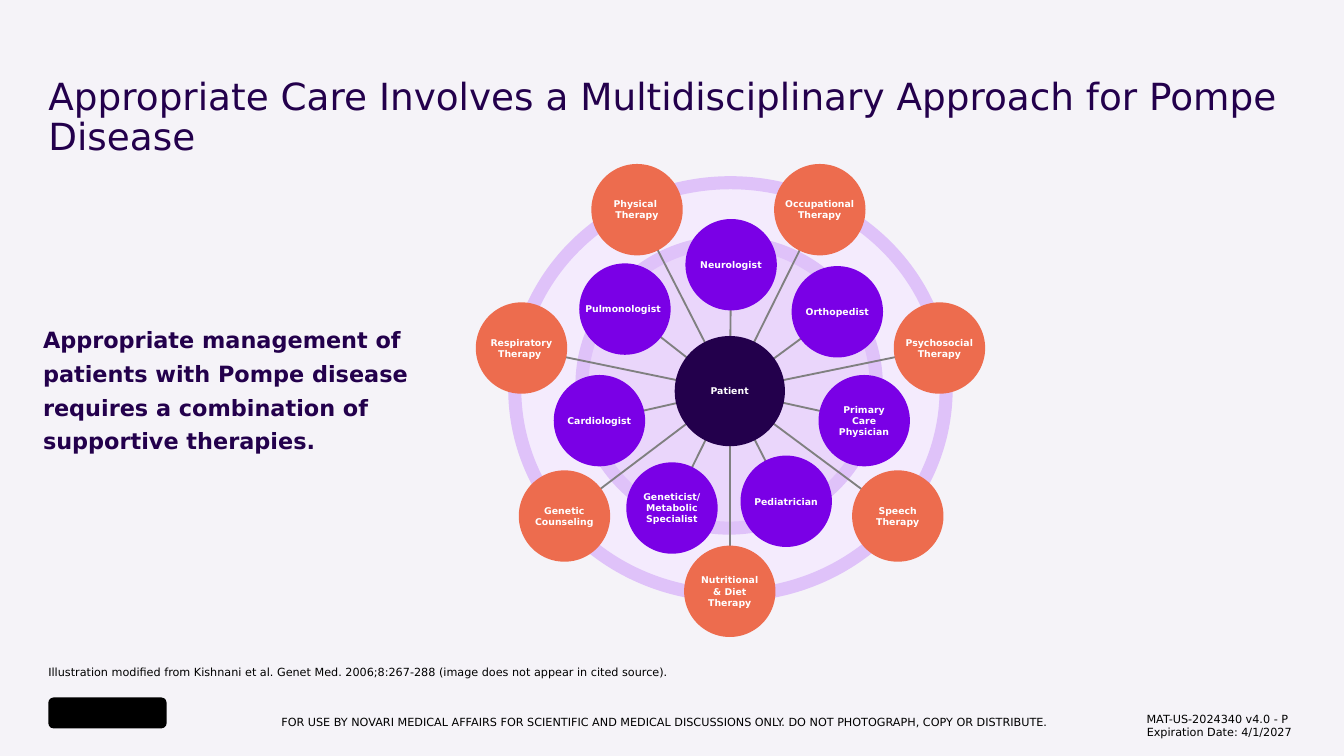
from lxml import etree
from pptx import Presentation
from pptx.dml.color import RGBColor
from pptx.enum.shapes import MSO_CONNECTOR, MSO_SHAPE
from pptx.enum.text import MSO_ANCHOR, PP_ALIGN
from pptx.oxml.ns import qn
from pptx.util import Inches, Pt

OVAL = MSO_SHAPE.OVAL
ROUNDED = MSO_SHAPE.ROUNDED_RECTANGLE
STRAIGHT = MSO_CONNECTOR.STRAIGHT
TOP, MIDDLE, BOTTOM = MSO_ANCHOR.TOP, MSO_ANCHOR.MIDDLE, MSO_ANCHOR.BOTTOM
LEFT, CENTER, RIGHT = PP_ALIGN.LEFT, PP_ALIGN.CENTER, PP_ALIGN.RIGHT

SLIDE_WIDTH = Inches(10)
SLIDE_HEIGHT = SLIDE_WIDTH * 9 // 16
UNIT = SLIDE_WIDTH / 100
FONT = "DejaVu Sans"
COLORS = {
    "background": "F5F3F8", "ink": "23004C", "specialist": "7A00E6",
    "therapy": "ED6C4E", "spoke": "808080", "ring": "DFC2F9",
    "outer_disc": "F4EBFD", "inner_disc": "EAD6FB",
    "white": "FFFFFF", "black": "000000",
}

HUB = (54.3, 29.1)
HUB_SIZE = 8.2
NODE_SIZE = 6.8
SPECIALIST_SPOKE = (0.33, 0.67)
THERAPY_SPOKE = (0.21, 0.8)
DISCS = [
    ((38.3, 13.6, 32.1, 30.7), "outer_disc"),
    ((43.3, 18, 21.9, 21.3), "inner_disc"),
]
SPECIALISTS = [
    ("Pulmonologist ", 46.5, 23),
    ("Cardiologist", 44.6, 31.3),
    ("Geneticist/\vMetabolic\vSpecialist", 50, 37.8),
    ("Pediatrician", 58.5, 37.3),
    ("Primary\vCare\vPhysician", 64.3, 31.3),
    ("Orthopedist", 62.3, 23.2),
    ("Neurologist", 54.4, 19.7),
]
THERAPIES = [
    ("Physical \nTherapy", 47.4, 15.6),
    ("Occupational\vTherapy", 61, 15.6),
    ("Genetic\vCounseling", 42, 38.4),
    ("Respiratory\vTherapy ", 38.8, 25.9),
    ("Nutritional\v& Diet\vTherapy", 54.3, 44),
    ("Speech\vTherapy", 66.8, 38.4),
    ("Psychosocial\vTherapy", 69.9, 25.9),
]


def color(name):
    return RGBColor.from_string(COLORS[name])


def scaled(*lengths):
    return [round(length * UNIT) for length in lengths]


def write(shape, text, size, color_name, bold=False, align=LEFT,
          anchor=TOP, spacing=None, wrap=True, insets=(0, 0)):
    frame = shape.text_frame
    frame.text = text
    frame.word_wrap = wrap
    frame.vertical_anchor = anchor
    frame.margin_left = frame.margin_right = Inches(insets[0])
    frame.margin_top = frame.margin_bottom = Inches(insets[1])
    for paragraph in frame.paragraphs:
        paragraph.alignment = align
        if spacing:
            paragraph.line_spacing = spacing
        for run in paragraph.runs:
            run.font.name = FONT
            run.font.size = Pt(size)
            run.font.bold = bold
            run.font.color.rgb = color(color_name)


def add_text(slide, box, text, size, color_name, **style):
    shape = slide.shapes.add_textbox(*scaled(*box))
    write(shape, text, size, color_name, **style)


def add_filled(slide, kind, box, fill, outline=None):
    shape = slide.shapes.add_shape(kind, *scaled(*box))
    shape.shadow.inherit = False
    shape.fill.solid()
    shape.fill.fore_color.rgb = color(fill)
    if outline:
        shape.line.color.rgb = color(outline)
        shape.line.width = Pt(7)
    else:
        shape.line.fill.background()
    return shape


def add_node(slide, label, x, y, size, fill):
    box = (x - size / 2, y - size / 2, size, size)
    shape = add_filled(slide, OVAL, box, fill)
    write(shape, label, 5, "white", bold=True, align=CENTER,
          anchor=MIDDLE, wrap=False)


def add_spoke(slide, x, y, shares):
    ends = []
    for share in shares:
        ends += [HUB[0] + share * (x - HUB[0]), HUB[1] + share * (y - HUB[1])]
    connector = slide.shapes.add_connector(STRAIGHT, *scaled(*ends))
    connector.line.color.rgb = color("spoke")
    connector.line.width = Pt(1)
    etree.SubElement(connector._element.spPr, qn("a:effectLst"))


def add_circle_of_care(slide, members, fill, shares):
    for _, x, y in members:
        add_spoke(slide, x, y, shares)
    for label, x, y in members:
        add_node(slide, label, x, y, NODE_SIZE, fill)


def add_care_wheel(slide):
    for box, fill in DISCS:
        add_filled(slide, OVAL, box, fill, "ring")
    add_circle_of_care(slide, SPECIALISTS, "specialist", SPECIALIST_SPOKE)
    add_circle_of_care(slide, THERAPIES, "therapy", THERAPY_SPOKE)
    add_node(slide, "Patient", *HUB, HUB_SIZE, "ink")


def add_footer(slide):
    add_filled(slide, ROUNDED, (3.6, 51.9, 8.8, 2.3), "black")
    add_text(slide, (19.4, 52.9, 60, 1.6),
             "FOR USE BY NOVARI MEDICAL AFFAIRS FOR SCIENTIFIC AND MEDICAL "
             "DISCUSSIONS ONLY. DO NOT PHOTOGRAPH, COPY OR DISTRIBUTE.",
             6, "black", align=CENTER, anchor=MIDDLE)
    add_text(slide, (79, 52.5, 17.8, 3),
             "MAT-US-2024340 v4.0 - P \vExpiration Date: 4/1/2027",
             6, "black", align=RIGHT, anchor=MIDDLE, insets=(0.07, 0.04))


def main():
    presentation = Presentation()
    presentation.slide_width = SLIDE_WIDTH
    presentation.slide_height = SLIDE_HEIGHT
    slide = presentation.slides.add_slide(presentation.slide_layouts[6])
    slide.background.fill.solid()
    slide.background.fill.fore_color.rgb = color("background")

    add_text(slide, (3.2, 23.8, 29.2, 32),
             "Appropriate management of patients with Pompe disease requires "
             "a combination of supportive therapies.",
             12, "ink", bold=True, spacing=1.25)
    add_text(slide, (3.6, 5.8, 92.8, 6.1),
             "Appropriate Care Involves a Multidisciplinary Approach for "
             "Pompe Disease", 20, "ink", spacing=0.9)
    add_text(slide, (3.6, 48.1, 92.7, 2.4),
             "Illustration modified from Kishnani et al. Genet Med. "
             "2006;8:267-288 (image does not appear in cited source).",
             6, "black", anchor=BOTTOM, spacing=1.25)
    add_care_wheel(slide)
    add_footer(slide)
    presentation.save("out.pptx")


if __name__ == "__main__":
    main()
